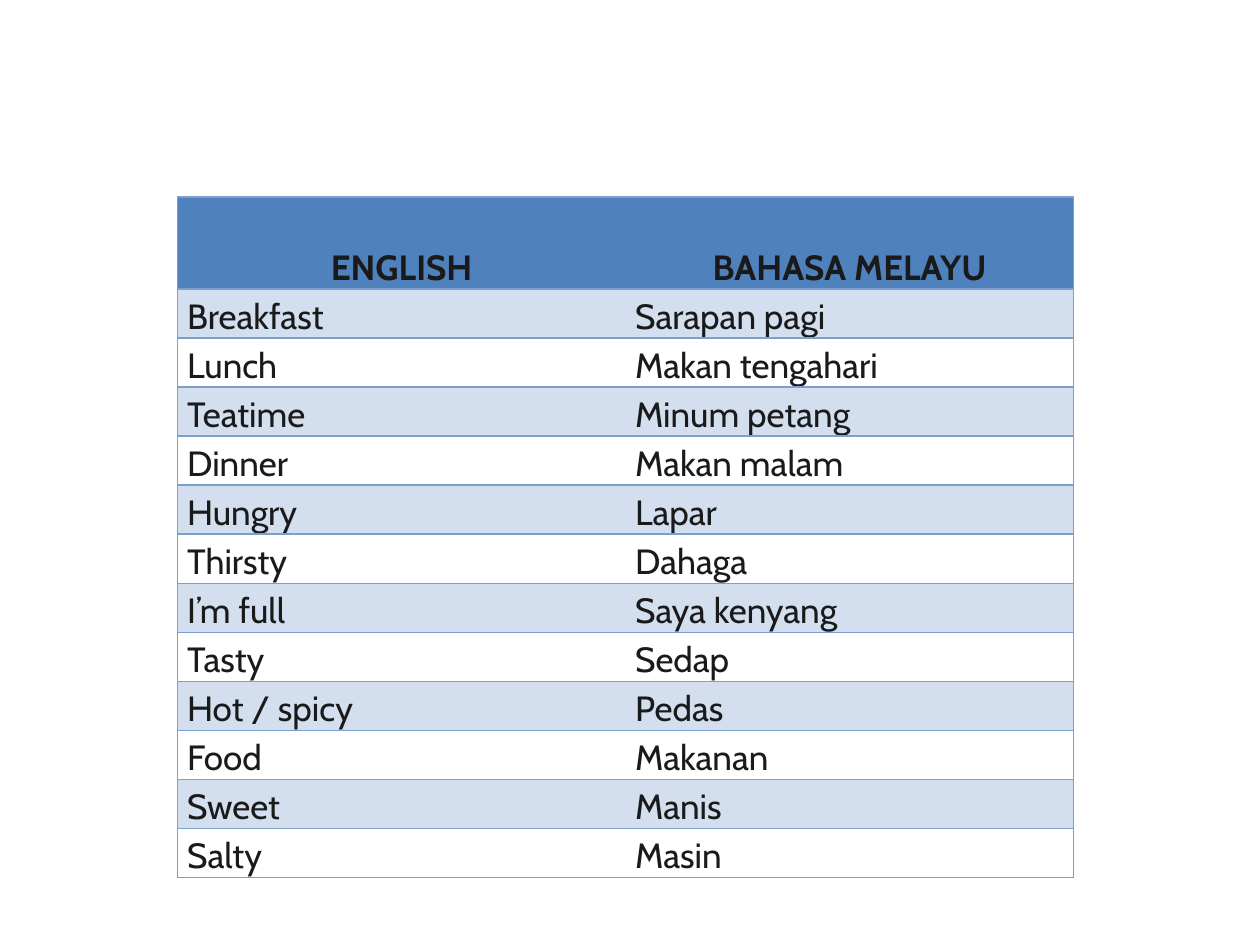
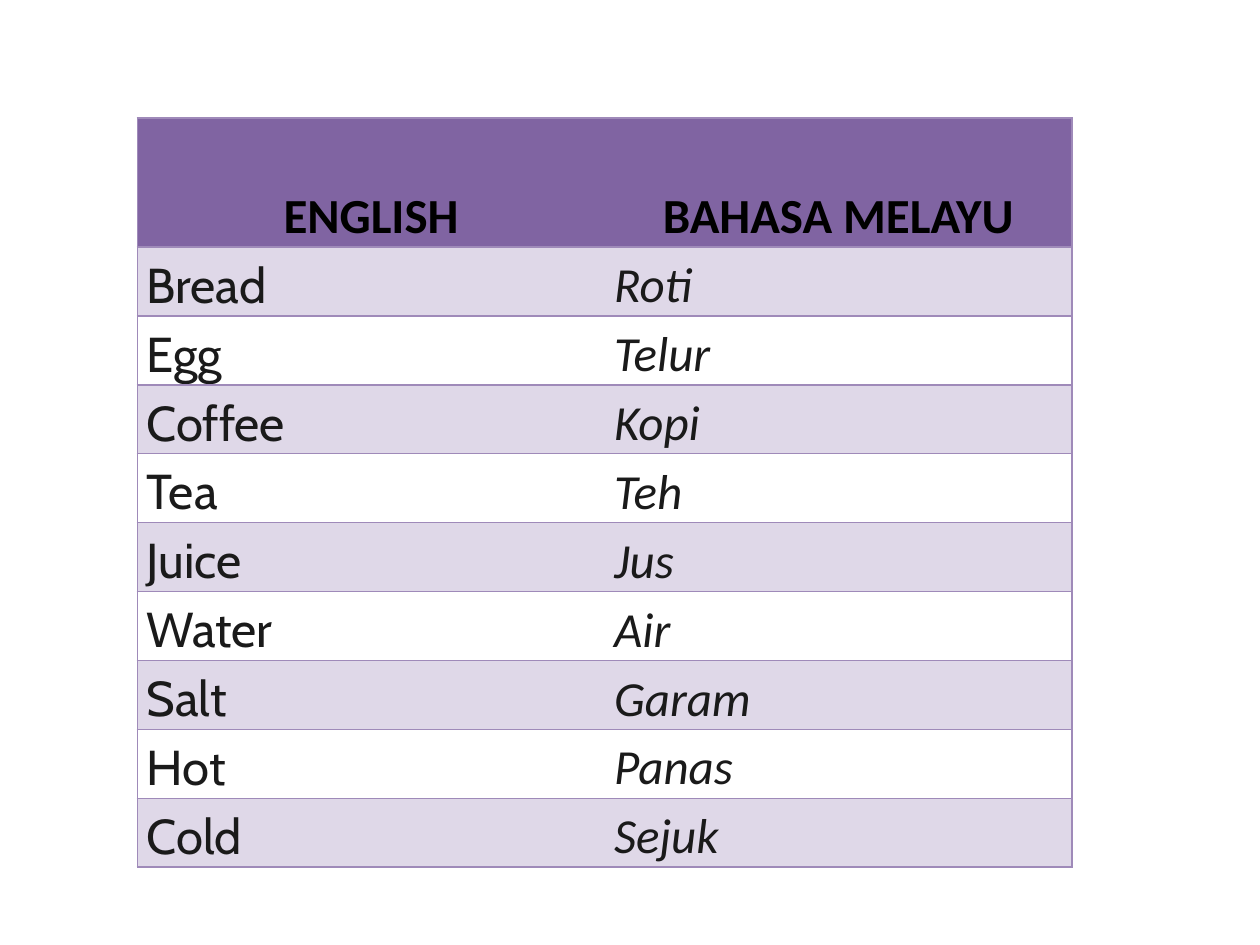
import lxml.etree
import pptx
import pptx.dml.color
import pptx.enum.text
import pptx.oxml.ns
import pptx.util

Pt = pptx.util.Pt
ALIGN = pptx.enum.text.PP_ALIGN
ANCHOR = pptx.enum.text.MSO_ANCHOR
INK = "1A1A1A"
HEADINGS = ("ENGLISH", "BAHASA MELAYU")


def color(hex_code):
    return pptx.dml.color.RGBColor.from_string(hex_code)


def write(cell, text, size, font="Cabin", ink=INK, bold=False, italic=False, align=ALIGN.LEFT):
    para = cell.text_frame.paragraphs[0]
    para.alignment = align
    para.line_spacing = 1.15
    span = para.add_run()
    span.text = text
    span.font.size = Pt(size)
    span.font.name = font
    span.font.color.rgb = color(ink)
    span.font.bold = bold
    span.font.italic = italic


# Vocabulary tables, one per slide; the text styles cover header and both columns
vocabularies = [
    dict(
        left=101.5, top=112.5, column_width=256, header_height=52.6, row_height=28.06,
        size=20, header_fill="4F81BD", band_fill="D3DFEE", border="7BA0CD",
        header_style={}, malay_style={},
        words=[
            ("Breakfast", "Sarapan pagi"),
            ("Lunch", "Makan tengahari"),
            ("Teatime", "Minum petang"),
            ("Dinner", "Makan malam"),
            ("Hungry", "Lapar"),
            ("Thirsty", "Dahaga"),
            ("I’m full", "Saya kenyang"),
            ("Tasty", "Sedap"),
            ("Hot / spicy", "Pedas"),
            ("Food", "Makanan"),
            ("Sweet", "Manis"),
            ("Salty", "Masin"),
        ],
    ),
    dict(
        left=78.5, top=67.5, column_width=267, header_height=73.7, row_height=39.35,
        size=28, header_fill="8064A2", band_fill="DFD8E8", border="9F8AB9",
        header_style=dict(font="Calibri", ink="000000"),
        malay_style=dict(font="Calibri", italic=True),
        words=[
            ("Bread", "Roti"),
            ("Egg", "Telur"),
            ("Coffee", "Kopi"),
            ("Tea", "Teh"),
            ("Juice", "Jus"),
            ("Water", "Air"),
            ("Salt", "Garam"),
            ("Hot", "Panas"),
            ("Cold", "Sejuk"),
        ],
    ),
]

deck = pptx.Presentation()
deck.slide_width = Pt(720)
deck.slide_height = Pt(540)

for vocabulary in vocabularies:
    page = deck.slides.add_slide(deck.slide_layouts[6])
    rows = [HEADINGS] + vocabulary["words"]
    heights = [vocabulary["header_height"]] + [vocabulary["row_height"]] * len(vocabulary["words"])
    table = page.shapes.add_table(
        len(rows), 2, Pt(vocabulary["left"]), Pt(vocabulary["top"]),
        Pt(2 * vocabulary["column_width"]), Pt(sum(heights))).table
    for column in table.columns:
        column.width = Pt(vocabulary["column_width"])

    for row_index, row in enumerate(rows):
        table.rows[row_index].height = Pt(heights[row_index])
        for column_index, text in enumerate(row):
            cell = table.cell(row_index, column_index)
            cell.margin_left = cell.margin_right = Pt(5.4)
            cell.margin_top = cell.margin_bottom = 0

            # Borders: outer frame and row lines, no line between the columns
            properties = cell._tc.get_or_add_tcPr()
            inner_side = ("lnR", "lnL")[column_index]
            for side in ("lnL", "lnR", "lnT", "lnB"):
                line = lxml.etree.SubElement(
                    properties, pptx.oxml.ns.qn("a:" + side), w=str(Pt(1)))
                if side == inner_side:
                    lxml.etree.SubElement(line, pptx.oxml.ns.qn("a:noFill"))
                else:
                    solid = lxml.etree.SubElement(line, pptx.oxml.ns.qn("a:solidFill"))
                    lxml.etree.SubElement(
                        solid, pptx.oxml.ns.qn("a:srgbClr"), val=vocabulary["border"])

            # Fill: header, then every other row
            if row_index % 2 or row_index == 0:
                cell.fill.solid()
                cell.fill.fore_color.rgb = color(
                    vocabulary["band_fill" if row_index else "header_fill"])
            else:
                cell.fill.background()

            # Words
            if row_index == 0:
                cell.vertical_anchor = ANCHOR.BOTTOM
                write(cell, text, vocabulary["size"], bold=True, align=ALIGN.CENTER,
                      **vocabulary["header_style"])
            else:
                style = vocabulary["malay_style"] if column_index else {}
                write(cell, text, vocabulary["size"], **style)

deck.save("out.pptx")
